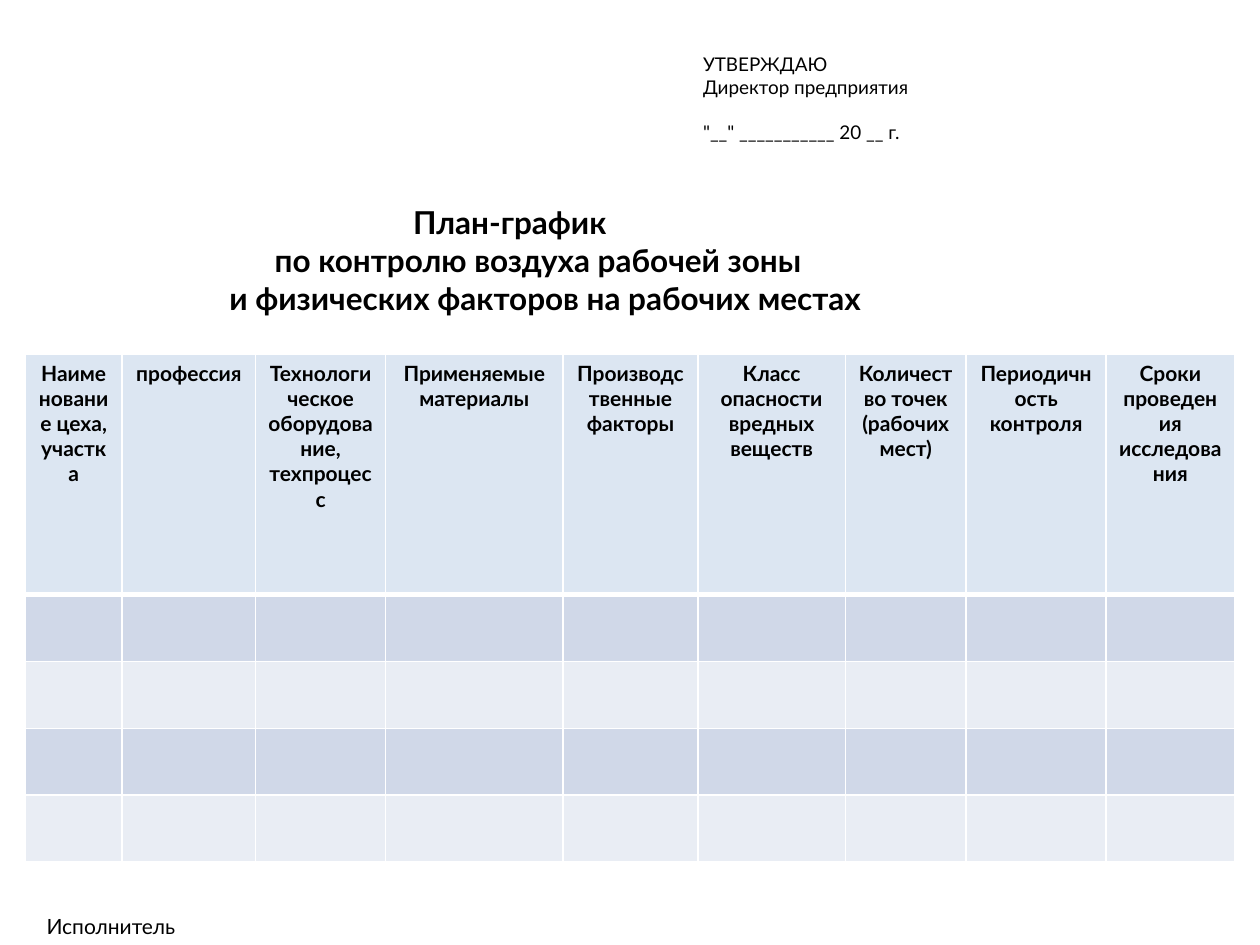
from dataclasses import dataclass

from lxml.etree import SubElement
from pptx import Presentation
from pptx.dml.color import RGBColor
from pptx.enum.text import PP_ALIGN
from pptx.oxml.ns import qn
from pptx.util import Inches, Pt


@dataclass(frozen=True)
class Theme:
    font: str = "Lato"
    ink: str = "000000"
    head: str = "DCE6F2"
    bands: tuple = ("D0D8E8", "E9EDF4")
    rule: str = "FFFFFF"
    small: float = 10.8
    body: float = 12
    title: float = 18
    thin: float = 1
    thick: float = 3


THEME = Theme()
WIDE, HIGH = Inches(10), Inches(7.5)

APPROVAL = ["УТВЕРЖДАЮ", "Директор предприятия", '"__" ___________ 20 __ г.']
TITLE = [
    ("План-график", 14.6),
    ("по контролю воздуха рабочей зоны", 3.6),
    ("и физических факторов на рабочих местах", 0),
]
COLUMNS = [
    ("Наименование цеха, участка", 7.7),
    ("профессия", 10.6),
    ("Технологическое оборудование, техпроцесс", 10.3),
    ("Применяемые материалы", 14.1),
    ("Производственные факторы", 10.7),
    ("Класс опасности вредных веществ", 11.7),
    ("Количество точек (рабочих мест)", 9.6),
    ("Периодичность контроля", 11.1),
    ("Сроки проведения исследования", 10.2),
]
ROWS = [25.47] + [7.07] * 4


def across(share):
    return round(WIDE * share / 100)


def down(share):
    return round(HIGH * share / 100)


def frame(x, y, w, h):
    return across(x), down(y), across(w), down(h)


def style(para, size, bold=False):
    font = para.font
    font.name, font.size, font.bold = THEME.font, Pt(size), bold
    font.color.rgb = RGBColor.from_string(THEME.ink)


def add_text(slide, area, lines, size, bold=False):
    text = slide.shapes.add_textbox(*frame(*area)).text_frame
    text.word_wrap = True
    text.margin_left = text.margin_right = 0
    text.margin_top = text.margin_bottom = 0
    text.text = "\n".join(lines)
    for para in text.paragraphs:
        style(para, size, bold)
    return text.paragraphs


def add_title(slide):
    lines = [line for line, _ in TITLE]
    paras = add_text(slide, (18.2, 21.5, 60, 12), lines, THEME.title, True)
    for para, (_, shift) in zip(paras, TITLE):
        para._p.get_or_add_pPr().set("marL", str(across(shift)))


def add_edges(cell, row):
    props = cell._tc.get_or_add_tcPr()
    heavy = {0: "lnB", 1: "lnT"}.get(row)
    for side in ("lnL", "lnR", "lnT", "lnB"):
        width = THEME.thick if side == heavy else THEME.thin
        line = SubElement(props, qn(f"a:{side}"), w=str(Pt(width)))
        fill = SubElement(line, qn("a:solidFill"))
        SubElement(fill, qn("a:srgbClr"), val=THEME.rule)


def paint(cell, row):
    add_edges(cell, row)
    color = THEME.bands[(row - 1) % 2] if row else THEME.head
    cell.fill.solid()
    cell.fill.fore_color.rgb = RGBColor.from_string(color)


def add_plan(slide):
    total = sum(share for _, share in COLUMNS)
    area = frame(2, 37.47, total, sum(ROWS))
    table = slide.shapes.add_table(len(ROWS), len(COLUMNS), *area).table
    for row, share in zip(table.rows, ROWS):
        row.height = down(share)
    for col, (label, share) in enumerate(COLUMNS):
        table.columns[col].width = across(share)
        for row in range(len(ROWS)):
            paint(table.cell(row, col), row)
        head = table.cell(0, col)
        head.text = label
        para = head.text_frame.paragraphs[0]
        para.alignment = PP_ALIGN.CENTER
        style(para, THEME.body, True)


def main():
    deck = Presentation()
    deck.slide_width, deck.slide_height = WIDE, HIGH
    slide = deck.slides.add_slide(deck.slide_layouts[6])
    paras = add_text(slide, (55.8, 5.6, 36, 10), APPROVAL, THEME.small)
    paras[-1].space_before = Pt(THEME.small * 1.2)
    add_title(slide)
    add_plan(slide)
    add_text(slide, (3.7, 96.7, 12, 2.7), ["Исполнитель"], THEME.body)
    deck.save("out.pptx")


if __name__ == "__main__":
    main()
